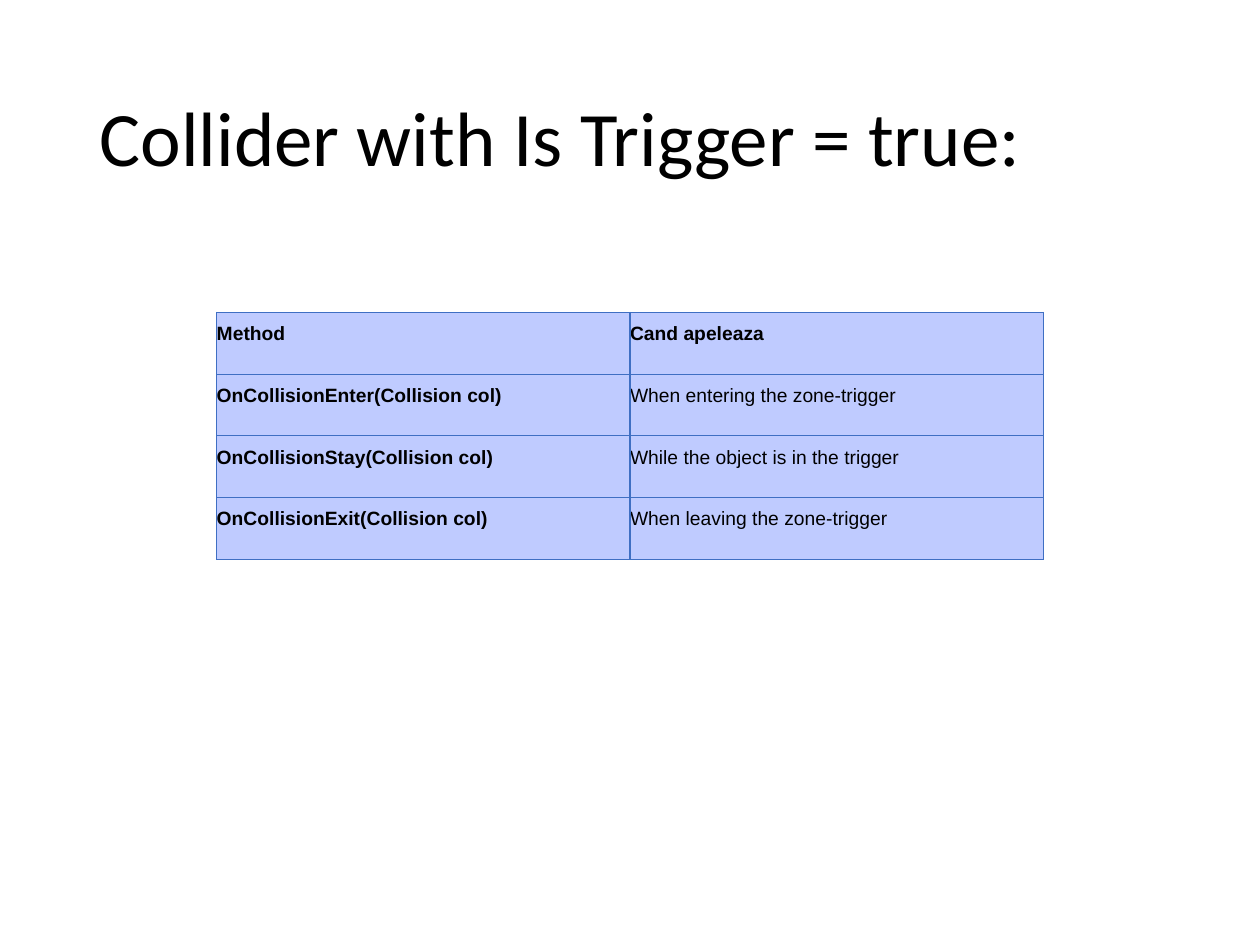
from lxml import etree
from pptx import Presentation
from pptx.dml.color import RGBColor
from pptx.enum.text import MSO_ANCHOR, PP_ALIGN
from pptx.oxml.ns import qn
from pptx.util import Inches, Pt

JUSTIFY, LEFT = PP_ALIGN.JUSTIFY, PP_ALIGN.LEFT
TOP, MIDDLE = MSO_ANCHOR.TOP, MSO_ANCHOR.MIDDLE
TITLE_ONLY = 5

ROWS = [
    ("Method", "Cand apeleaza"),
    ("OnCollisionEnter(Collision col)", "When entering the zone-trigger"),
    ("OnCollisionStay(Collision col)", "While the object is in the trigger"),
    ("OnCollisionExit(Collision col)", "When leaving the zone-trigger"),
]


def rgb(color):
    return RGBColor.from_string(color)


def set_format(target, values):
    for name, value in values.items():
        setattr(target, name, value)


class SlideBuilder:
    TEXT, FILL, BORDER = "000000", "BFCBFF", "3F6FC3"
    TITLE_FONT = {"name": "Calibri", "size": Pt(44), "bold": False}
    CELL_FONT = {"name": "Arial", "size": Pt(11)}
    TITLE_PARAGRAPH = {"alignment": LEFT, "line_spacing": 0.9}
    CELL_PARAGRAPH = {"alignment": JUSTIFY, "line_spacing": 1.5}
    CELL_FORMAT = {"margin_left": 0, "margin_top": 0, "margin_right": 0,
                   "margin_bottom": 0, "vertical_anchor": TOP}

    def __init__(self, slide):
        self.s = slide

    def add_text(self, tf, text, paragraph, font):
        p = tf.paragraphs[0]
        set_format(p, paragraph)
        r = p.add_run()
        r.text = text
        set_format(r.font, font)
        r.font.color.rgb = rgb(self.TEXT)

    def title(self, text, left, top, width, height):
        sp = self.s.shapes.title
        set_format(sp, {"left": Inches(left), "top": Inches(top),
                        "width": Inches(width), "height": Inches(height)})
        tf = sp.text_frame
        set_format(tf, {"word_wrap": True, "vertical_anchor": MIDDLE})
        self.add_text(tf, text, self.TITLE_PARAGRAPH, self.TITLE_FONT)

    def border(self, cell):
        tc_pr = cell._tc.get_or_add_tcPr()
        for i, side in enumerate(("a:lnL", "a:lnR", "a:lnT", "a:lnB")):
            ln = etree.Element(qn(side), w=str(Pt(0.75)))
            fill = etree.SubElement(ln, qn("a:solidFill"))
            etree.SubElement(fill, qn("a:srgbClr"), val=self.BORDER)
            tc_pr.insert(i, ln)

    def table(self, rows, left, top, col_width, row_height):
        n_rows, n_cols = len(rows), len(rows[0])
        table = self.s.shapes.add_table(
            n_rows, n_cols, Inches(left), Inches(top),
            Inches(col_width * n_cols), Inches(row_height * n_rows)).table
        set_format(table, {"first_row": False, "horz_banding": False})
        for i, row in enumerate(rows):
            for j, text in enumerate(row):
                cell = table.cell(i, j)
                set_format(cell, self.CELL_FORMAT)
                cell.fill.solid()
                cell.fill.fore_color.rgb = rgb(self.FILL)
                self.border(cell)
                bold = i == 0 or j == 0
                self.add_text(cell.text_frame, text, self.CELL_PARAGRAPH,
                              {**self.CELL_FONT, "bold": bold})


def main():
    prs = Presentation()
    prs.slide_width, prs.slide_height = Inches(10), Inches(7.5)
    builder = SlideBuilder(prs.slides.add_slide(prs.slide_layouts[TITLE_ONLY]))
    builder.title("Collider with Is Trigger = true:", 0.69, 0.4, 8.62, 1.45)
    builder.table(ROWS, 1.72, 2.48, col_width=3.28, row_height=0.49)
    prs.save("out.pptx")


if __name__ == "__main__":
    main()
